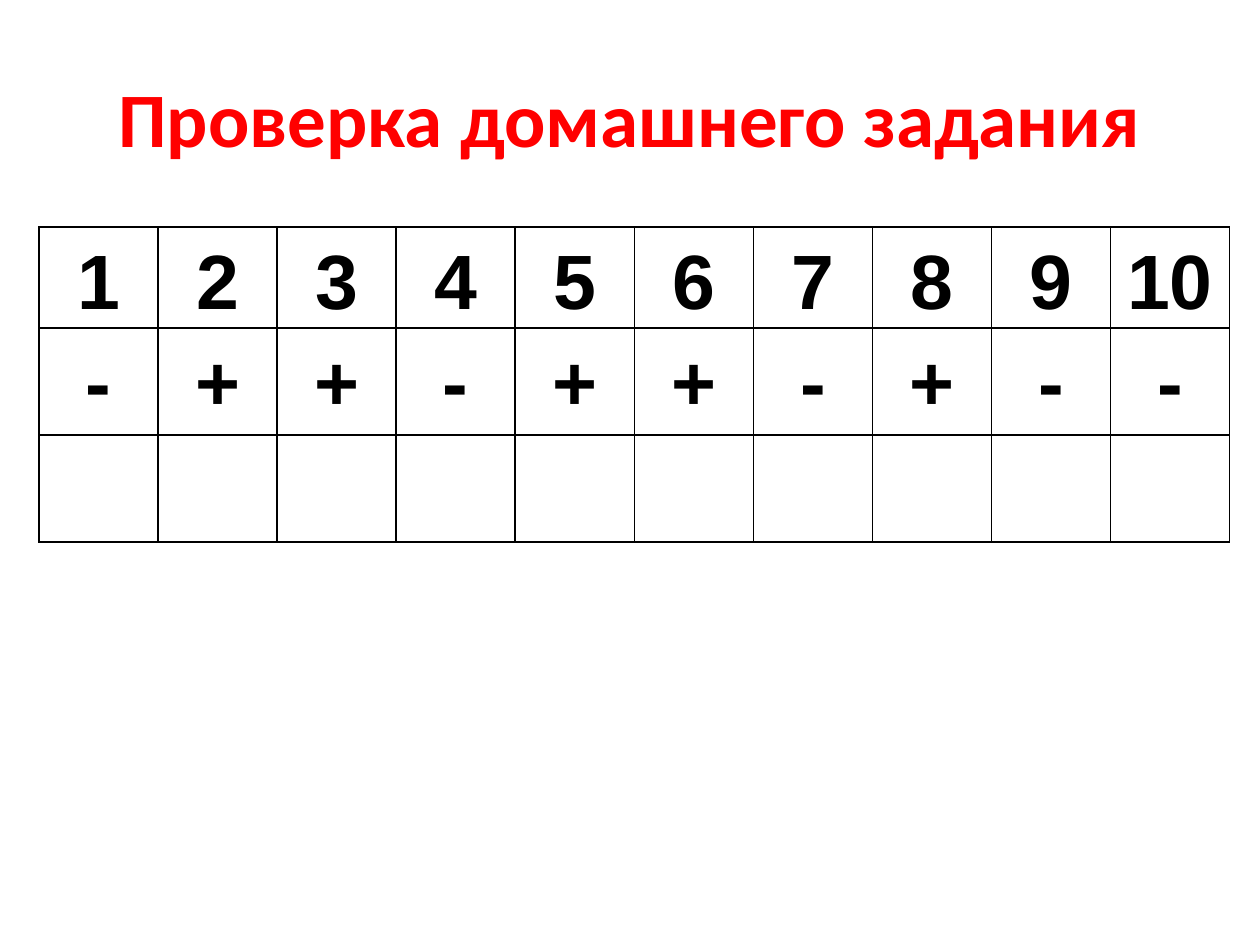
from lxml import etree
from pptx import Presentation
from pptx import util as u
from pptx.dml.color import RGBColor
from pptx.enum import text
from pptx.oxml.ns import qn

EMU_PER_PX = 914400 / 126
SLIDE_SIZE = (1260, 945)
TITLE_BOX = (63, 38, 1134, 158)
TABLE_BOX = (39, 227, 1191, 315)
HEADER_HEIGHT = 101
ANSWERS = "-++-++-+--"


def px(length):
    return u.Emu(round(length * EMU_PER_PX))


def color(hex_string):
    return RGBColor.from_string(hex_string)


def add_text(paragraph, content, font_name, hex_string):
    paragraph.alignment = text.PP_ALIGN.CENTER
    run = paragraph.add_run()
    run.text = content
    run.font.name = font_name
    run.font.size = u.Pt(44)
    run.font.bold = True
    run.font.color.rgb = color(hex_string)


def set_borders(cell, hex_string, width):
    properties = cell._tc.get_or_add_tcPr()
    for side in ("a:lnL", "a:lnR", "a:lnT", "a:lnB"):
        line = etree.SubElement(properties, qn(side), w=str(u.Pt(width)))
        fill = etree.SubElement(line, qn("a:solidFill"))
        etree.SubElement(fill, qn("a:srgbClr"), val=hex_string)


def place_title(slide, box, content):
    title = slide.shapes.title
    title.left, title.top, title.width, title.height = map(px, box)
    frame = title.text_frame
    frame.word_wrap = True
    frame.vertical_anchor = text.MSO_ANCHOR.MIDDLE
    add_text(frame.paragraphs[0], content, "Calibri", "FF0000")


def add_answer_table(slide, box, answers):
    """Add question numbers, their answers and an empty row for marks."""
    width, height = box[2:]
    numbers = [str(number) for number in range(1, len(answers) + 1)]
    rows = [numbers, list(answers), [""] * len(answers)]
    table = slide.shapes.add_table(len(rows), len(answers), *map(px, box)).table
    table.first_row = table.horz_banding = False
    for column in table.columns:
        column.width = px(width / len(answers))
    for index, row in enumerate(table.rows):
        row.height = px(HEADER_HEIGHT if index == 0 else (height - HEADER_HEIGHT) / 2)
        for cell, content in zip(row.cells, rows[index]):
            set_borders(cell, "000000", 1)
            cell.fill.background()
            cell.margin_left = cell.margin_right = px(8)
            cell.margin_top = cell.margin_bottom = 0
            if content:
                paragraph = cell.text_frame.paragraphs[0]
                paragraph.line_spacing = 1.15
                add_text(paragraph, content, "Arial", "000000")


def main():
    presentation = Presentation()
    presentation.slide_width, presentation.slide_height = map(px, SLIDE_SIZE)
    slide = presentation.slides.add_slide(presentation.slide_layouts[5])
    place_title(slide, TITLE_BOX, "Проверка домашнего задания")
    add_answer_table(slide, TABLE_BOX, ANSWERS)
    presentation.save("out.pptx")


if __name__ == "__main__":
    main()
